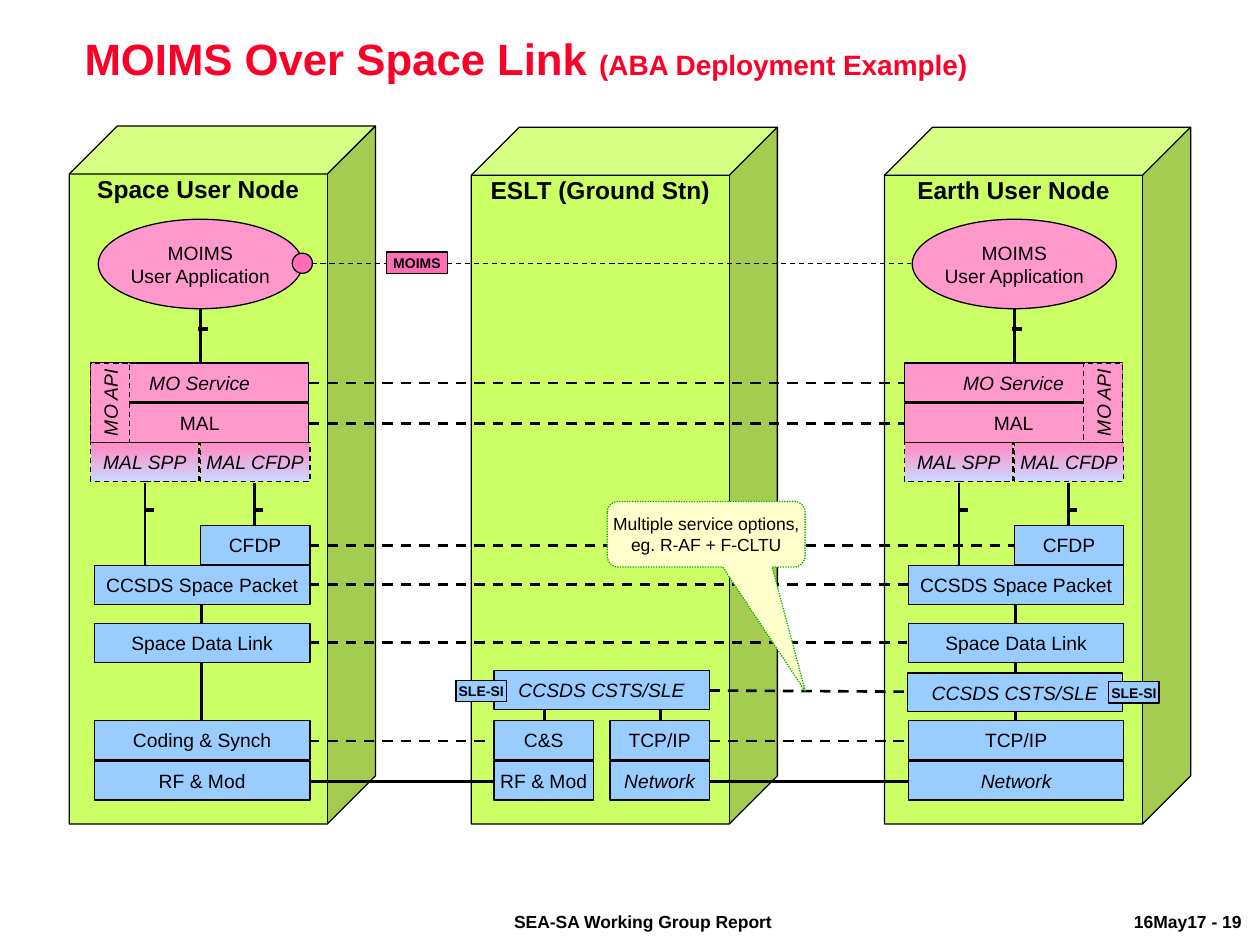
import dataclasses

import pptx
import pptx.dml.color
import pptx.enum.dml
import pptx.enum.shapes
import pptx.enum.text
import pptx.oxml
import pptx.oxml.ns
import pptx.util

Inches = pptx.util.Inches
Pt = pptx.util.Pt
Rgb = pptx.dml.color.RGBColor.from_string
Shape = pptx.enum.shapes.MSO_SHAPE
Dash = pptx.enum.dml.MSO_LINE
Align = pptx.enum.text.PP_ALIGN
Anchor = pptx.enum.text.MSO_ANCHOR


@dataclasses.dataclass(frozen=True)
class Theme:
    font: str = "Arial"
    ink: str = "000000"
    title: str = "FC0128"
    node: str = "CCFF66"
    moims: str = "FF99CC"
    port: str = "FF6DB6"
    protocol: str = "99CCFF"
    binding: tuple = ((0.07, "FF8DC6"), (0.98, "CCD6FF"))
    note: str = "FFFFCC"
    note_edge: str = "00AE00"
    title_size: float = 25
    subtitle_size: float = 16
    node_size: float = 14
    label_size: float = 11
    small_size: float = 10
    tag_size: float = 8
    thin: float = 0.75
    medium: float = 1.5
    thick: float = 2.25


theme = Theme()
deck = pptx.Presentation()
deck.slide_width, deck.slide_height = Inches(10), Inches(7.5)
slide = deck.slides.add_slide(deck.slide_layouts[6])


def add_box(text, left, top, width, height, *, shape=Shape.RECTANGLE, fill=theme.protocol,
            edge=theme.ink, dash=None, adjust=(), rotation=0, size=theme.label_size,
            color=theme.ink, bold=False, italic=False, align=Align.CENTER,
            anchor=Anchor.MIDDLE, insets=(0.02, 0.02), wrap=True):
    """Add a labelled shape, or a plain text box when shape is None."""
    place = [Inches(value) for value in (left, top, width, height)]
    if shape is None:
        box = slide.shapes.add_textbox(*place)
    else:
        box = slide.shapes.add_shape(shape, *place)
        box.shadow.inherit = False
        box.rotation = rotation
        for index, value in enumerate(adjust):
            box.adjustments[index] = value
        if isinstance(fill, tuple):
            box.fill.gradient()
            box.fill.gradient_angle = 270
            for stop, (position, shade) in zip(box.fill.gradient_stops, fill):
                stop.position = position
                stop.color.rgb = Rgb(shade)
        else:
            box.fill.solid()
            box.fill.fore_color.rgb = Rgb(fill)
        box.line.color.rgb = Rgb(edge)
        box.line.width = Pt(theme.thin)
        if dash:
            box.line.dash_style = dash
    frame = box.text_frame
    frame.word_wrap = wrap
    frame.vertical_anchor = anchor
    frame.margin_left = frame.margin_right = Inches(insets[0])
    frame.margin_top = frame.margin_bottom = Inches(insets[1])
    frame.text = text
    for paragraph in frame.paragraphs:
        paragraph.alignment = align
        for run in paragraph.runs:
            run.font.name, run.font.size = theme.font, Pt(size)
            run.font.bold, run.font.italic = bold, italic
            run.font.color.rgb = Rgb(color)
    return box


def add_line(x1, y1, x2, y2, width=theme.medium, dash=None):
    line = slide.shapes.add_connector(
        pptx.enum.shapes.MSO_CONNECTOR.STRAIGHT, Inches(x1), Inches(y1), Inches(x2), Inches(y2))
    line.line.color.rgb = Rgb(theme.ink)
    line.line.width = Pt(width)
    if dash:
        line.line.dash_style = dash
    effects = pptx.oxml.parse_xml(f'<a:effectLst {pptx.oxml.ns.nsdecls("a")}/>')
    line._element.spPr.append(effects)


# Title and footer
title = add_box("MOIMS Over Space Link ", 0.2, 0.21, 7.95, 0.55, shape=None, bold=True,
                size=theme.title_size, color=theme.title, insets=(0.1, 0.05))
title_line = title.text_frame.paragraphs[0]
title_line.line_spacing = 0.9
subtitle = title_line.add_run()
subtitle.text = "(ABA Deployment Example)"
subtitle.font.name, subtitle.font.size = theme.font, Pt(theme.subtitle_size)
subtitle.font.bold = True
subtitle.font.color.rgb = Rgb(theme.title)

for footer, left, width in [("SEA-SA Working Group Report", 3.99, 2.26),
                            ("16May17 - 19", 8.91, 1.06)]:
    add_box(footer, left, 7.19, width, 0.26, shape=None, size=theme.small_size, bold=True,
            align=Align.LEFT, anchor=Anchor.TOP, insets=(0.09, 0.04), wrap=False)

# Nodes
for node, left, top in [("Space User Node", 0.55, 1), ("Earth User Node", 7.02, 1.01),
                        ("ESLT (Ground Stn)", 3.74, 1.01)]:
    add_box(node, left, top, 2.43, 6.54 - top, shape=Shape.CUBE, fill=theme.node,
            adjust=[0.157], size=theme.node_size, bold=True, anchor=Anchor.TOP,
            insets=(0.1, 0), wrap=False)

# Layers that both user nodes share
ROW = 0.31
SPACE, EARTH = 0.72, 7.18
for node_x in (SPACE, EARTH):
    stack_x, middle = node_x + 0.03, node_x + 0.87
    add_line(middle, 2.45, middle, 2.88)
    add_line(node_x + 0.43, 3.83, node_x + 0.43, 4.49)
    add_line(node_x + 1.3, 3.83, node_x + 1.3, 4.17)
    add_line(middle + 0.01, 4.8, middle + 0.01, 4.95)
    for tick_x, tick_y in [(0.85, 2.61), (0.42, 4.05), (1.29, 4.05)]:
        add_line(node_x + tick_x, tick_y, node_x + tick_x + 0.08, tick_y, theme.thick)

    add_box("MOIMS\nUser Application", node_x + 0.06, 1.74, 1.62, 0.71, shape=Shape.OVAL,
            fill=theme.moims, insets=(0, 0.05))
    add_box("MAL SPP", node_x, 3.51, 0.86, ROW, fill=theme.binding, dash=Dash.DASH, italic=True)
    add_box("MAL CFDP", middle, 3.51, 0.87, ROW, fill=theme.binding, dash=Dash.DASH, italic=True)
    add_box("MAL", node_x, 3.2, 1.73, ROW, fill=theme.moims)
    add_box("MO Service", node_x, 2.88, 1.73, ROW, fill=theme.moims, italic=True)
    add_box("CFDP", middle, 4.17, 0.87, ROW)
    add_box("CCSDS Space Packet", stack_x, 4.49, 1.71, ROW)
    add_box("Space Data Link", stack_x, 4.95, 1.71, ROW)

# Lower layers of each node
add_line(1.6, 5.26, 1.6, 5.72)
for link_x, start, end in [(4.32, 5.54, 5.72), (5.24, 5.52, 5.72),
                           (8.06, 5.26, 5.34), (8.06, 5.65, 5.72)]:
    add_line(link_x, start, link_x, end)
for layer, left, top, width, italic in [
    ("Coding & Synch", 0.75, 5.72, 1.71, False),
    ("RF & Mod", 0.75, 6.04, 1.71, False),
    ("C&S", 3.92, 5.72, 0.79, False),
    ("RF & Mod", 3.92, 6.04, 0.79, False),
    ("TCP/IP", 4.84, 5.72, 0.79, False),
    ("Network", 4.84, 6.04, 0.79, True),
    ("CCSDS CSTS/SLE", 3.92, 5.32, 1.71, True),
    ("CCSDS CSTS/SLE", 7.2, 5.34, 1.71, True),
    ("TCP/IP", 7.21, 5.72, 1.71, False),
    ("Network", 7.21, 6.04, 1.71, True),
]:
    add_box(layer, left, top, width, ROW, italic=italic)

# Links between peer layers
for start, end in [(2.45, 3.92), (5.63, 7.21)]:
    add_line(start, 6.2, end, 6.2)
    add_line(start, 5.88, end, 5.88, dash=Dash.DASH)
for end, link_y in [(7.18, 3.04), (7.18, 3.36), (8.05, 4.33), (7.21, 4.64), (7.2, 5.1)]:
    add_line(2.45, link_y, end, link_y, dash=Dash.DASH)
add_line(5.63, 5.48, 7.2, 5.49, dash=Dash.DASH)
add_line(2.4, 2.09, 7.23, 2.09, theme.thin, Dash.DASH)

# Ports, interfaces and the service note
add_box("", 2.32, 2.01, 0.16, 0.16, shape=Shape.OVAL, fill=theme.port)
add_box("Multiple service options, eg. R-AF + F-CLTU", 4.82, 3.98, 1.57, 0.52,
        shape=Shape.ROUNDED_RECTANGULAR_CALLOUT, adjust=[0.502, 2.403, 0.167],
        fill=theme.note, edge=theme.note_edge, dash=Dash.ROUND_DOT,
        size=theme.small_size, insets=(0, 0))
for left in (0.56, 8.44):
    add_box("MO API", left, 3.04, 0.63, ROW, rotation=270, fill=theme.moims,
            dash=Dash.DASH, italic=True)
for tag, left, top, width, fill in [("MOIMS", 3.07, 2, 0.48, theme.port),
                                    ("SLE-SI", 3.62, 5.4, 0.4, theme.protocol),
                                    ("SLE-SI", 8.8, 5.41, 0.4, theme.protocol)]:
    add_box(tag, left, top, width, 0.17, fill=fill, size=theme.tag_size, bold=True,
            anchor=Anchor.TOP)

deck.save("out.pptx")
